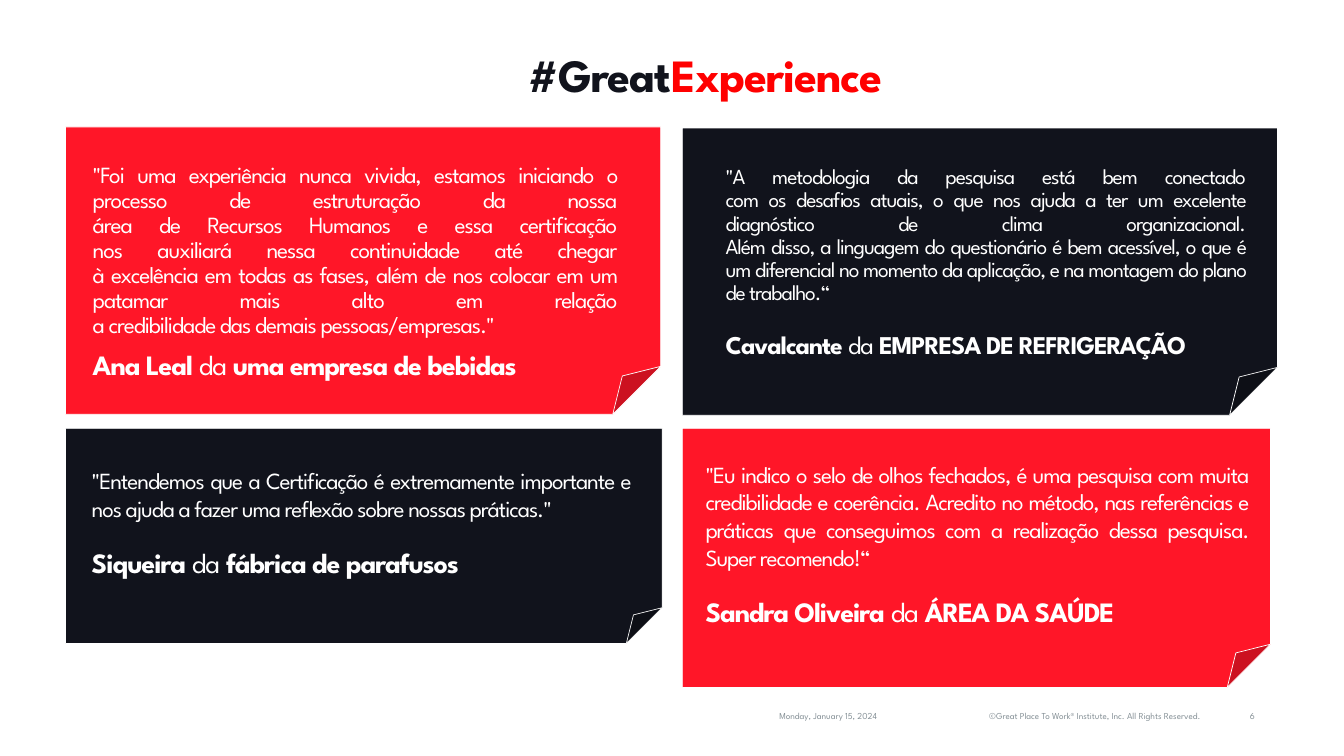
"""Builds the #GreatExperience slide with four customer quotes on folded cards."""
from pptx import Presentation
from pptx.dml.color import RGBColor
from pptx.enum.shapes import MSO_SHAPE
from pptx.enum.text import MSO_ANCHOR, MSO_AUTO_SIZE, PP_ALIGN
from pptx.util import Pt

PX = 9144
FONT = "League Spartan"
COLORS = {"red": "FF1628", "dark": "11131C", "white": "FFFFFF",
          "pure": "FF0000", "gray": "879298"}


def rgb(name):
    return RGBColor.from_string(COLORS[name])


def style(frame, anchor, inset=True):
    frame.word_wrap = True
    frame.auto_size = MSO_AUTO_SIZE.NONE
    frame.vertical_anchor = anchor
    if not inset:
        frame.margin_left = frame.margin_right = 0
        frame.margin_top = frame.margin_bottom = 0


deck = Presentation()
deck.slide_width, deck.slide_height = 2667 * PX, 1500 * PX
slide = deck.slides.add_slide(deck.slide_layouts[5])
shapes = slide.shapes

title = shapes.title
title.left, title.top, title.width, title.height = [n * PX for n in (1005, 104, 790, 147)]
style(title.text_frame, MSO_ANCHOR.TOP, False)
head = title.text_frame.paragraphs[0]
head.alignment, head.line_spacing = PP_ALIGN.CENTER, 0.9
head.font.name, head.font.size, head.font.bold = FONT, Pt(66), True
for text, color in (("#Great", "dark"), ("Experience", "pure")):
    run = head.add_run()
    run.text = text
    run.font.color.rgb = rgb(color)
    run.font._element.set("spc", "-150")

footer = [
    (1167, 583, "Monday, January 15, 2024"),
    (1782, 610, "©Great Place To Work® Institute, Inc. All Rights Reserved."),
    (2420, 80, "6"),
]
for left, width, text in footer:
    box = shapes.add_textbox(left * PX, 1408 * PX, width * PX, 25 * PX)
    style(box.text_frame, MSO_ANCHOR.MIDDLE)
    para = box.text_frame.paragraphs[0]
    para.text, para.alignment = text, PP_ALIGN.RIGHT
    para.font.name, para.font.size = FONT, Pt(13)
    para.font.color.rgb = rgb("gray")

cards = [
    ("red", (130, 252, 1181, 570), (184, 324, 1041, 455), 33.1, 0.9, 40, 0.7, 26,
     ['"Foi uma experiência nunca vivida, estamos iniciando o processo de estruturação da nossa',
      "área de Recursos Humanos e essa certificação",
      "nos auxiliará nessa continuidade até chegar",
      "à excelência em todas as fases, além de nos colocar em um patamar mais alto em relação",
      'a credibilidade das demais pessoas/empresas."'],
     "Ana Leal", "uma empresa de bebidas"),
    ("dark", (1354, 254, 1181, 570), (1440, 330, 1032, 433), 30.6, 0.9, 36.5, 0.9, 39,
     ['"A metodologia da pesquisa está bem conectado',
      "com os desafios atuais, o que nos ajuda a ter um excelente diagnóstico de clima organizacional.",
      "Além disso, a linguagem do questionário é bem acessível, o que é um diferencial no momento "
      "da aplicação, e na montagem do plano de trabalho.“"],
     "Cavalcante", "EMPRESA DE REFRIGERAÇÃO"),
    ("dark", (130, 850, 1184, 427), (182, 925, 1070, 352), 33, 1.0, 40, 0.9, 39,
     ['"Entendemos que a Certificação é extremamente importante e nos ajuda a fazer uma '
      'reflexão sobre nossas práticas."'],
     "Siqueira", "fábrica de parafusos"),
    ("red", (1354, 850, 1167, 514), (1400, 913, 1078, 411), 33, 1.0, 40, 0.9, 39,
     ['"Eu indico o selo de olhos fechados, é uma pesquisa com muita credibilidade e coerência. '
      "Acredito no método, nas referências e práticas que conseguimos com a realização dessa "
      "pesquisa. Super recomendo!“"],
     "Sandra Oliveira", "ÁREA DA SAÚDE"),
]
for fill, card, area, size, pitch, big, tight, gap, lines, person, firm in cards:
    note = shapes.add_shape(MSO_SHAPE.FOLDED_CORNER, *[n * PX for n in card])
    note.shadow.inherit = False
    note.fill.solid()
    note.fill.fore_color.rgb = rgb(fill)
    note.line.color.rgb = rgb("white")
    note.line.width = Pt(1)

    box = shapes.add_textbox(*[n * PX for n in area])
    style(box.text_frame, MSO_ANCHOR.TOP, False)
    quote = box.text_frame.paragraphs[0]
    quote.text, quote.line_spacing = "\v".join(lines), pitch
    name = box.text_frame.add_paragraph()
    name.line_spacing, name.space_before = tight, Pt(gap)
    for text, bold in ((person, True), (" da ", False), (firm, True)):
        run = name.add_run()
        run.text, run.font.bold = text, bold
    for para, points in ((quote, size), (name, big)):
        para.alignment = PP_ALIGN.JUSTIFY
        para.font.name, para.font.size = FONT, Pt(points)
        para.font.color.rgb = rgb("white")
        for run in para.runs:
            run.font._element.set("spc", "-150")

deck.save("out.pptx")
